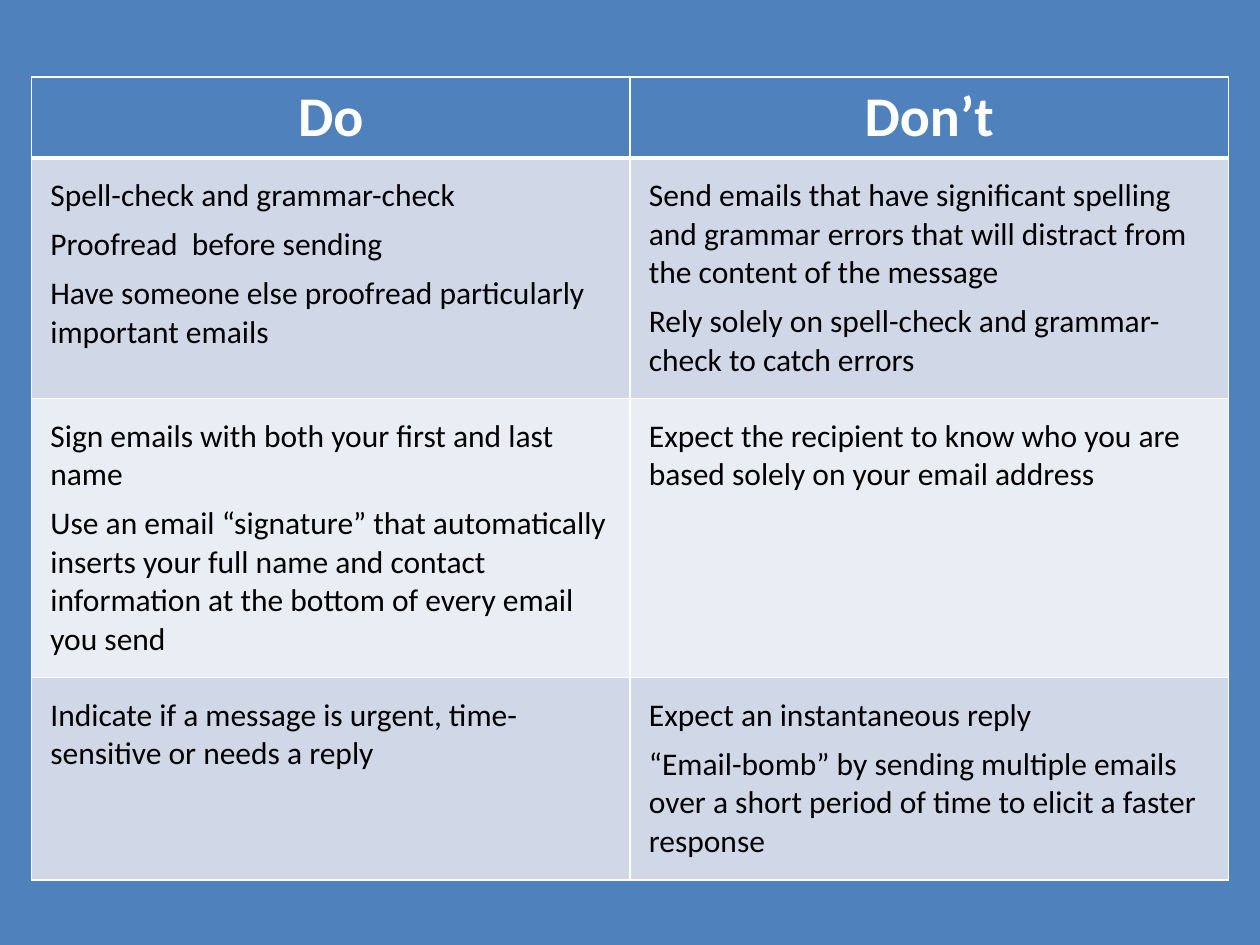
import pptx
import pptx.dml.color
import pptx.enum.text
import pptx.oxml
import pptx.oxml.ns
import pptx.util
from pptx.util import Inches

# Content: header, then one (do, don't) pair of paragraph lists per row
HEADERS = ("Do", "Don’t")
ADVICE = [
    (
        ["Spell-check and grammar-check",
         "Proofread  before sending",
         "Have someone else proofread particularly important emails"],
        ["Send emails that have significant spelling and grammar errors that "
         "will distract from the content of the message",
         "Rely solely on spell-check and grammar-check to catch errors"],
    ),
    (
        ["Sign emails with both your first and last name",
         "Use an email “signature” that automatically inserts your full name "
         "and contact information at the bottom of every email you send"],
        ["Expect the recipient to know who you are based solely on your "
         "email address"],
    ),
    (
        ["Indicate if a message is urgent, time-sensitive or needs a reply"],
        ["Expect an instantaneous reply",
         "“Email-bomb” by sending multiple emails over a short period of time "
         "to elicit a faster response"],
    ),
]

THEME = {
    "font": "Calibri",
    "blue": "4F81BD",
    "bands": ("D0D8E8", "E9EDF4"),
    "rule": "FFFFFF",
    "thin": 1,
    "thick": 3,
    "header": {"size": 32, "bold": True, "color": "FFFFFF"},
    "body": {"size": 18, "bold": False, "color": "000000"},
}
LEFT, TOP, WIDTH = 0.25, 0.61, 9.5
ROW_HEIGHTS = (0.64, 1.91, 2.21, 1.6)
BODY_INSET = 0.15
BODY_FORMAT = {f"margin_{side}": Inches(BODY_INSET)
               for side in ("left", "right", "top", "bottom")}


def rgb(value):
    return pptx.dml.color.RGBColor.from_string(value)


def set_borders(cell, widths):
    """Draw the left, right, top and bottom rules, widths in points."""
    properties = cell._tc.get_or_add_tcPr()
    for side, width in zip("LRTB", widths):
        properties.append(pptx.oxml.parse_xml(
            f'<a:ln{side} {pptx.oxml.ns.nsdecls("a")} w="{pptx.util.Pt(width)}">'
            f'<a:solidFill><a:srgbClr val="{THEME["rule"]}"/></a:solidFill>'
            f'</a:ln{side}>'))


def fill_cell(cell, texts, text_style, para_format):
    frame = cell.text_frame
    for index, text in enumerate(texts):
        para = frame.add_paragraph() if index else frame.paragraphs[0]
        for name, value in para_format.items():
            setattr(para, name, value)
        span = para.add_run()
        span.text = text
        font_format = {"name": THEME["font"], "bold": text_style["bold"],
                       "size": pptx.util.Pt(text_style["size"])}
        for name, value in font_format.items():
            setattr(span.font, name, value)
        span.font.color.rgb = rgb(text_style["color"])


def build():
    deck = pptx.Presentation()
    deck.slide_width, deck.slide_height = Inches(10), Inches(7.5)
    page = deck.slides.add_slide(deck.slide_layouts[6])

    # Background
    page.background.fill.solid()
    page.background.fill.fore_color.rgb = rgb(THEME["blue"])

    # Table grid
    rows = [tuple([header] for header in HEADERS)] + ADVICE
    table = page.shapes.add_table(
        len(rows), len(HEADERS), Inches(LEFT), Inches(TOP),
        Inches(WIDTH), Inches(sum(ROW_HEIGHTS))).table
    for column in table.columns:
        column.width = Inches(WIDTH / len(HEADERS))
    for row, height in zip(table.rows, ROW_HEIGHTS):
        row.height = Inches(height)

    # Cells: header on blue, then alternating bands
    thin, thick = THEME["thin"], THEME["thick"]
    for row_index, row in enumerate(rows):
        is_header = row_index == 0
        for column_index, texts in enumerate(row):
            cell = table.cell(row_index, column_index)
            set_borders(cell, (thin, thin, thick if row_index == 1 else thin,
                               thick if is_header else thin))
            cell.fill.solid()
            if is_header:
                cell.fill.fore_color.rgb = rgb(THEME["blue"])
                fill_cell(cell, texts, THEME["header"],
                          {"alignment": pptx.enum.text.PP_ALIGN.CENTER})
            else:
                band = THEME["bands"][(row_index - 1) % 2]
                cell.fill.fore_color.rgb = rgb(band)
                for name, value in BODY_FORMAT.items():
                    setattr(cell, name, value)
                fill_cell(cell, texts, THEME["body"],
                          {"space_after": pptx.util.Pt(6)})

    deck.save("out.pptx")


if __name__ == "__main__":
    build()
